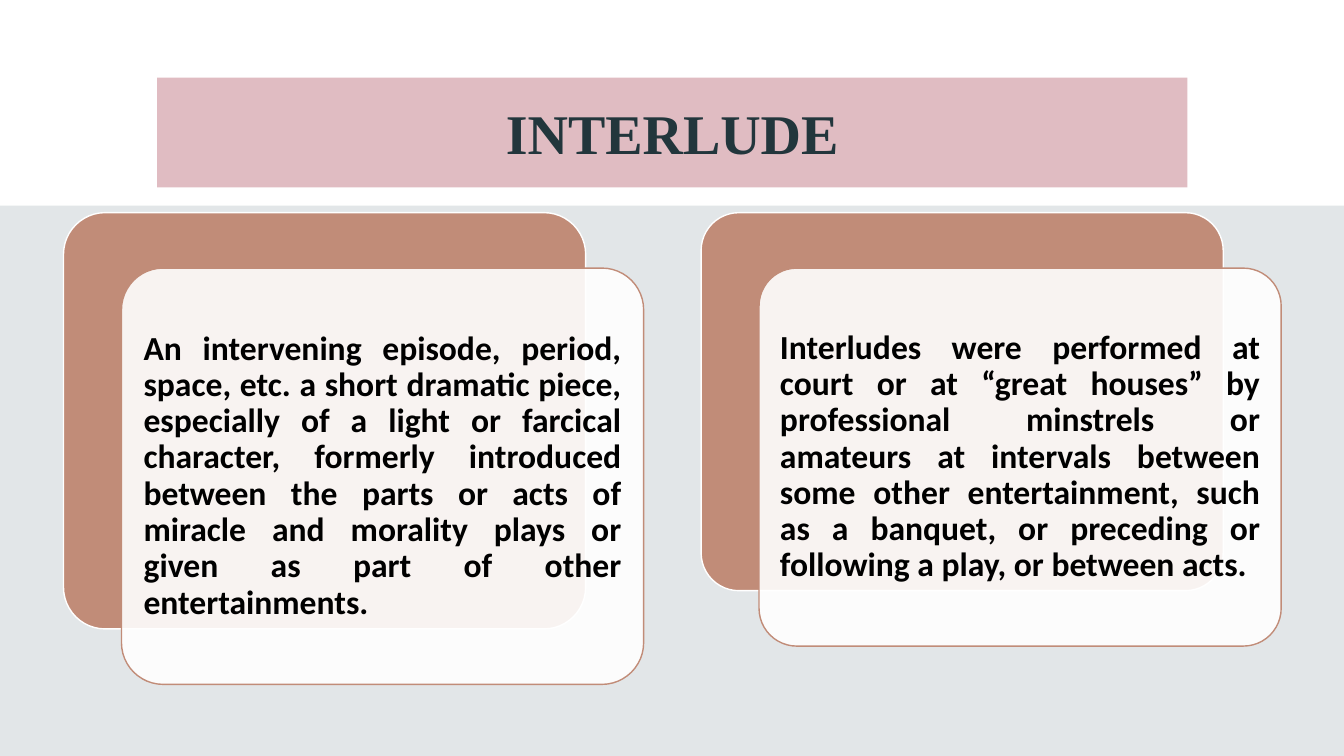
import pptx
import pptx.util
import pptx.dml.color
import pptx.enum.shapes
import pptx.enum.text
import pptx.oxml
import pptx.oxml.ns

Kind = pptx.enum.shapes.MSO_SHAPE
Align = pptx.enum.text.PP_ALIGN
Anchor = pptx.enum.text.MSO_ANCHOR

CELL = pptx.util.Inches(0.1)
COLS, ROWS = 133.33, 75

CARDS = [
    (41.3, "An intervening episode, period, space, etc. a short dramatic piece, "
           "especially of a light or farcical character, formerly introduced between "
           "the parts or acts of miracle and morality plays or given as part of other "
           "entertainments."),
    (37.5, "Interludes were performed at court or at “great houses” by professional "
           "minstrels or amateurs at intervals between some other entertainment, such "
           "as a banquet, or preceding or following a play, or between acts."),
]


def color(code):
    return pptx.dml.color.RGBColor.from_string(code)


def apply(item, style):
    for name, value in style.items():
        setattr(item, name, value)


class Deck:
    ink, rose, clay, mist, white = "22363C", "E0BCC2", "C18C78", "E2E6E8", "FFFFFF"
    head = {"name": "Times New Roman", "size": pptx.util.Pt(40), "bold": True}
    body = {"name": "Calibri", "size": pptx.util.Pt(24), "bold": True}

    def __init__(self):
        self.file = pptx.Presentation()
        apply(self.file, {"slide_width": round(COLS * CELL),
                          "slide_height": ROWS * CELL})
        self.slide = self.file.slides.add_slide(self.file.slide_layouts[5])
        self.paint(self.slide.background, self.white)

    def grid(self, *cells):
        return [round(cell * CELL) for cell in cells]

    def paint(self, item, code):
        item.fill.solid()
        item.fill.fore_color.rgb = color(code)

    def label(self, shape, text, font, ink, align, pad, space=1.0):
        frame = shape.text_frame
        frame.text = text
        sides = ("margin_left", "margin_top", "margin_right", "margin_bottom")
        apply(frame, {"word_wrap": True, "vertical_anchor": Anchor.MIDDLE,
                      "auto_size": pptx.enum.text.MSO_AUTO_SIZE.NONE,
                      **dict.fromkeys(sides, round(pad * CELL))})
        para = frame.paragraphs[0]
        apply(para, {"alignment": align, "line_spacing": space})
        apply(para.runs[0].font, font)
        para.runs[0].font.color.rgb = color(ink)

    def title(self, text, *cells):
        shape = self.slide.shapes.title
        names = ("left", "top", "width", "height")
        apply(shape, dict(zip(names, self.grid(*cells))))
        self.paint(shape, self.rose)
        self.label(shape, text, self.head, self.ink, Align.CENTER, 1)

    def band(self, top):
        shape = self.slide.shapes.add_shape(
            Kind.RECTANGLE, *self.grid(0, top, COLS, ROWS - top))
        shape.shadow.inherit = False
        self.paint(shape, self.mist)
        shape.line.fill.background()

    def panel(self, fill, edge, *cells):
        shape = self.slide.shapes.add_shape(
            Kind.ROUNDED_RECTANGLE, *self.grid(*cells))
        shape.shadow.inherit = False
        shape.adjustments[0] = 0.1
        self.paint(shape, fill)
        shape.line.color.rgb = color(edge)
        shape.line.width = pptx.util.Pt(1)
        return shape

    def fade(self, shape, share):
        tint = shape.element.spPr.find(pptx.oxml.ns.qn("a:solidFill"))[0]
        alpha = pptx.oxml.parse_xml(
            '<a:alpha xmlns:a="http://schemas.openxmlformats.org/drawingml/2006/main"'
            f' val="{share * 1000}"/>')
        tint.append(alpha)

    def card(self, text, left, top, width, height):
        self.panel(self.clay, self.white, left, top, width, height)
        front = self.panel(self.white, self.clay, left + 5.75, top + 5.5, width, height)
        self.fade(front, 90)
        self.label(front, text, self.body, "000000", Align.JUSTIFY, 1, 0.9)


def main():
    deck = Deck()
    deck.title("INTERLUDE", 15.6, 7.7, 102.2, 10.9)
    deck.band(20.4)
    for step, (height, text) in enumerate(CARDS):
        deck.card(text, 6.3 + step * 63.25, 21.1, 51.8, height)
    deck.file.save("out.pptx")


if __name__ == "__main__":
    main()
